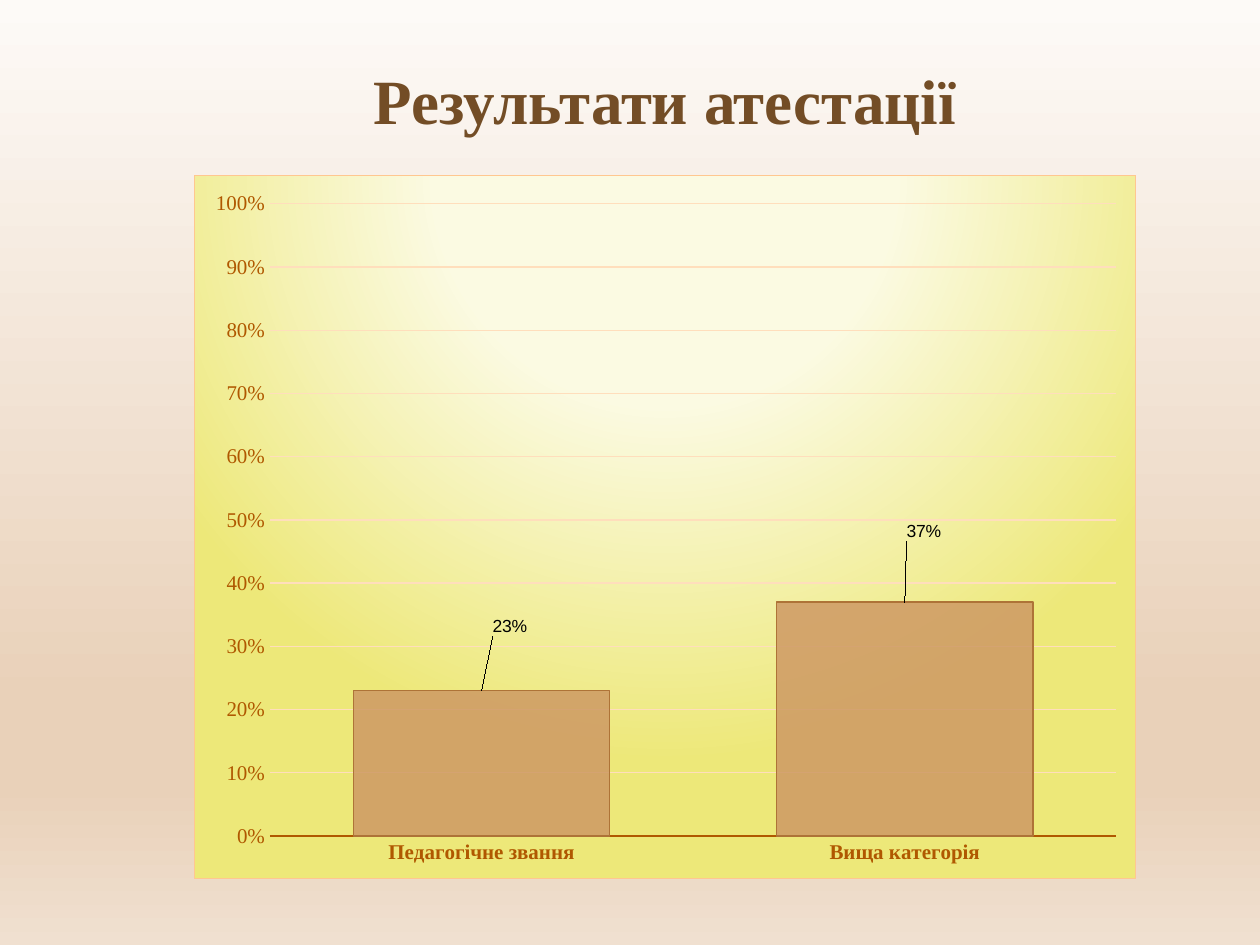
"""Builds a slide with the attestation results as a column chart."""
import lxml.etree
import pptx
import pptx.chart.data
import pptx.dml.color
import pptx.enum.chart
import pptx.enum.text
import pptx.oxml
import pptx.oxml.ns
import pptx.util

COLORS = {
    "title": "734D26", "axis": "B05800", "grid": "FFDEBC", "border": "FFC790",
    "bar": "CE9964", "bar_line": "AE7337", "text": "402000", "label": "000000",
    "sky": "FDFAF7", "sand": "E9D1B9", "cream": "F0E0D0",
    "pale": "FBFAE2", "yellow": "EDE879",
}
RESULTS = {"Педагогічне звання": 0.23, "Вища категорія": 0.37}
LABEL_SHIFTS = [(0.03, -0.07), (0.02, -0.08)]


class SlideBuilder:
    scale = 914400 / 126
    font_name = "Times New Roman"

    def __init__(self, deck):
        self.page = deck.slides.add_slide(deck.slide_layouts[5])

    def px(self, *lengths):
        return [pptx.util.Emu(round(length * self.scale)) for length in lengths]

    def color(self, name):
        return pptx.dml.color.RGBColor.from_string(COLORS[name])

    def style_font(self, font, size, color, bold=False, name=font_name):
        font.name, font.size, font.bold = name, pptx.util.Pt(size), bold
        font.color.rgb = self.color(color)

    def style_line(self, line, color, width):
        line.color.rgb = self.color(color)
        line.width = pptx.util.Pt(width)

    def gradient(self, stops, direction):
        marks = "".join(
            f'<a:gs pos="{place * 1000}"><a:srgbClr val="{COLORS[name]}"/></a:gs>'
            for place, name in stops)
        return (f'<a:gradFill {pptx.oxml.ns.nsdecls("a")} rotWithShape="1">'
                f'<a:gsLst>{marks}</a:gsLst>{direction}</a:gradFill>')

    def layout(self, inner="", **values):
        parts = "".join(f'<c:{key} val="{value}"/>' for key, value in values.items())
        return pptx.oxml.parse_xml(
            f'<c:layout {pptx.oxml.ns.nsdecls("c")}><c:manualLayout>'
            f'{inner}{parts}</c:manualLayout></c:layout>')

    def background(self, stops):
        self.page.background.fill.solid()
        solid = self.page.element.xpath("p:cSld/p:bg/p:bgPr/a:solidFill")[0]
        fill = self.gradient(stops, '<a:lin ang="5400000" scaled="0"/>')
        solid.getparent().replace(solid, pptx.oxml.parse_xml(fill))

    def title(self, text, *place):
        box = self.page.shapes.title
        box.left, box.top, box.width, box.height = self.px(*place)
        frame = box.text_frame
        frame.text = text
        frame.word_wrap = False
        frame.auto_size = pptx.enum.text.MSO_AUTO_SIZE.SHAPE_TO_FIT_TEXT
        para = frame.paragraphs[0]
        para.alignment = pptx.enum.text.PP_ALIGN.CENTER
        self.style_font(para.runs[0].font, 36, "title", bold=True)

    def column_chart(self, results, shifts, *place):
        data = pptx.chart.data.CategoryChartData(number_format="0%")
        data.categories = list(results)
        data.add_series("Series 1", list(results.values()))
        kind = pptx.enum.chart.XL_CHART_TYPE.COLUMN_CLUSTERED
        chart = self.page.shapes.add_chart(kind, *self.px(*place), data).chart
        chart.has_legend = chart.has_title = False
        self.style_font(chart.font, 10, "text")
        self.style_axes(chart)
        self.style_bars(chart, shifts)
        self.style_areas(chart)

    def style_axes(self, chart):
        for axis, bold in ((chart.category_axis, True), (chart.value_axis, False)):
            axis.major_tick_mark = axis.minor_tick_mark = pptx.enum.chart.XL_TICK_MARK.NONE
            self.style_font(axis.tick_labels.font, 12, "axis", bold)
        self.style_line(chart.category_axis.format.line, "axis", 1.5)
        values = chart.value_axis
        values.minimum_scale, values.maximum_scale, values.major_unit = 0, 1, 0.1
        values.tick_labels.number_format = "0%"
        values.tick_labels.number_format_is_linked = False
        values.format.line.fill.background()
        self.style_line(values.major_gridlines.format.line, "grid", 0.75)

    def style_bars(self, chart, shifts):
        plot = chart.plots[0]
        plot.gap_width = 65
        plot.vary_by_categories = False
        series = plot.series[0]
        series.format.fill.solid()
        series.format.fill.fore_color.rgb = self.color("bar")
        self.style_line(series.format.line, "bar_line", 0.75)
        shade = chart.element.xpath(".//c:ser/c:spPr/a:solidFill/a:srgbClr")[0]
        lxml.etree.SubElement(shade, pptx.oxml.ns.qn("a:alpha"), val="85000")
        for index in range(len(shifts)):
            label = series.points[index].data_label
            self.style_font(label.font, 10, "label", name="Arial")
            label.position = pptx.enum.chart.XL_LABEL_POSITION.OUTSIDE_END
        for label, (x, y) in zip(chart.element.xpath(".//c:dLbl"), shifts):
            label.insert(1, self.layout(x=x, y=y))

    def style_areas(self, chart):
        area = chart.element.xpath("c:chart/c:plotArea")[0]
        for old in area.xpath("c:layout"):
            area.remove(old)
        inner = ('<c:layoutTarget val="inner"/><c:xMode val="edge"/>'
                 '<c:yMode val="edge"/>')
        area.insert(0, self.layout(inner, x=0.08, y=0.04, w=0.9, h=0.9))
        fill = self.gradient(
            [(0, "pale"), (39, "pale"), (100, "yellow")],
            '<a:path path="circle"><a:fillToRect l="50000" t="-80000" '
            'r="50000" b="180000"/></a:path>')
        frame = pptx.oxml.parse_xml(
            f'<c:spPr {pptx.oxml.ns.nsdecls("c", "a")}>{fill}<a:ln w="9525">'
            f'<a:solidFill><a:srgbClr val="{COLORS["border"]}"/></a:solidFill>'
            '</a:ln></c:spPr>')
        chart.element.xpath("c:chart")[0].addnext(frame)


def main():
    deck = pptx.Presentation()
    deck.slide_width, deck.slide_height = pptx.util.Inches(10), pptx.util.Inches(7.5)
    builder = SlideBuilder(deck)
    builder.background([(0, "sky"), (74, "sand"), (83, "sand"), (100, "cream")])
    builder.column_chart(RESULTS, LABEL_SHIFTS, 194, 175, 942, 704)
    builder.title("Результати атестації", 358, 55, 614, 89)
    deck.save("out.pptx")


if __name__ == "__main__":
    main()
